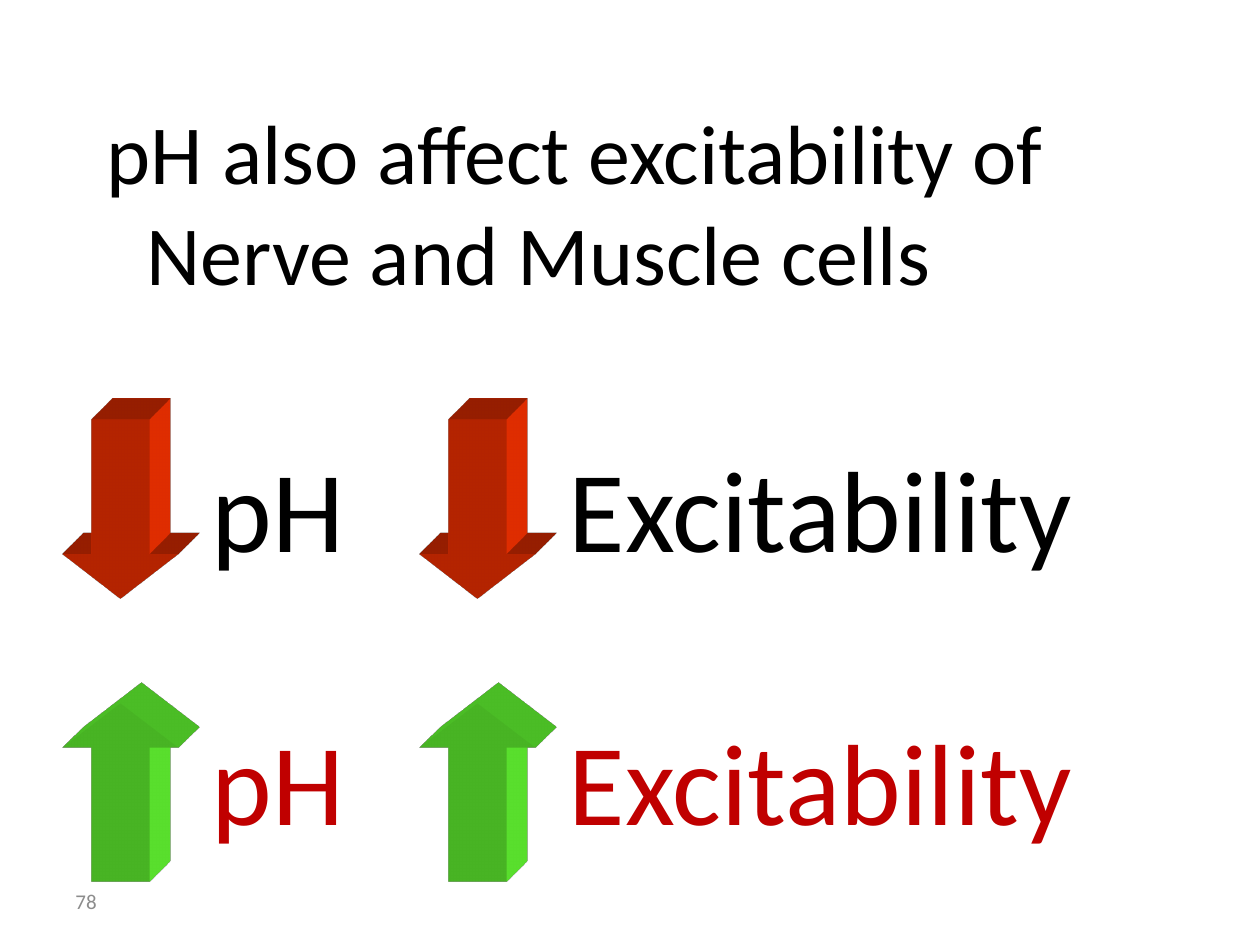
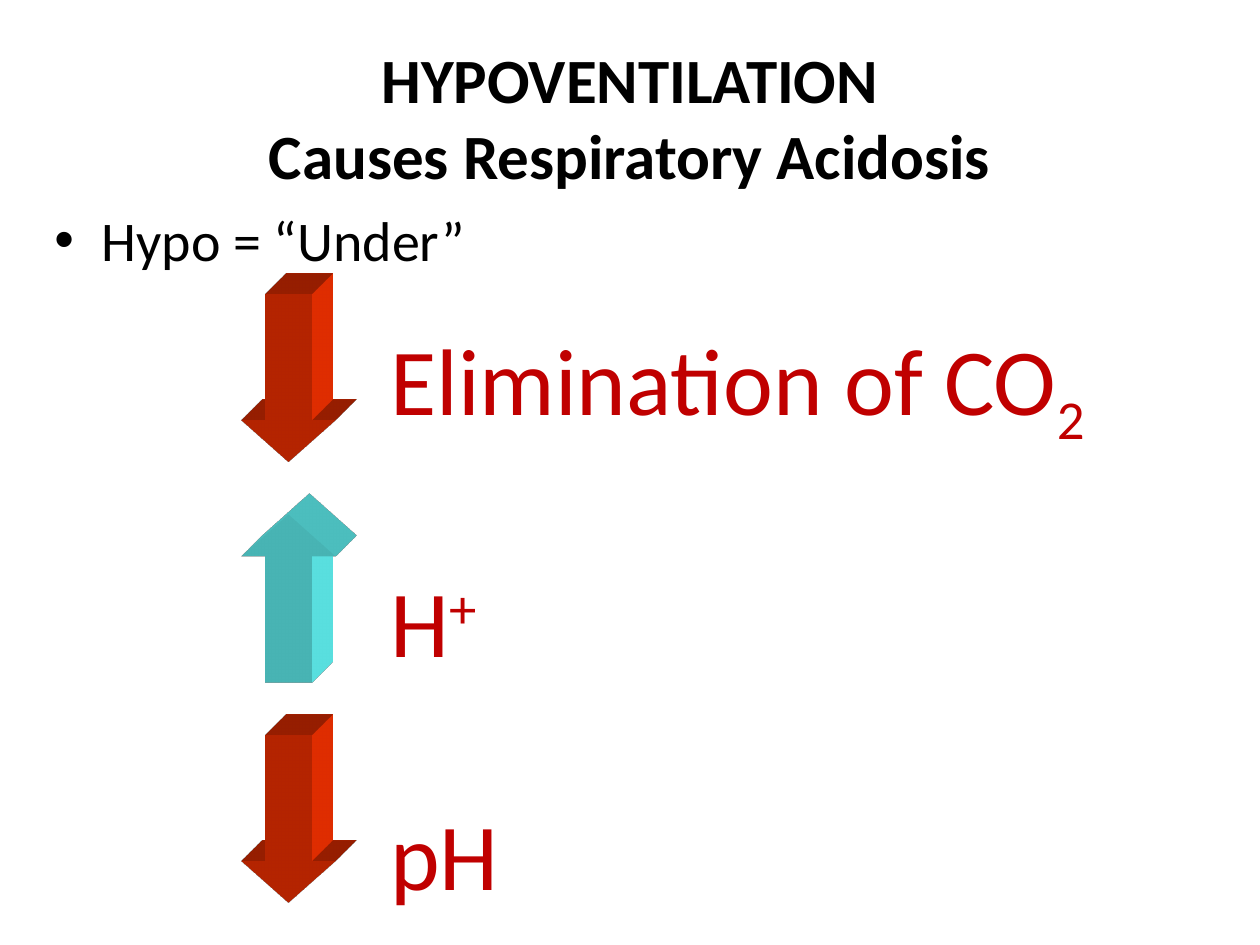
from lxml import etree
from pptx import Presentation
from pptx.dml.color import RGBColor
from pptx.enum import shapes, text
from pptx.oxml import ns
from pptx.util import Pt

FONT = "Calibri"
BLACK, CRIMSON, GRAY = "000000", "C00000", "8C8C8C"
RED, GREEN, CYAN = "FF3300", "66FF33", "66FFFF"
UP, DOWN = shapes.MSO_SHAPE.UP_ARROW, shapes.MSO_SHAPE.DOWN_ARROW
DEPTH = Pt(33.87)


def color(value):
    return RGBColor.from_string(value)


def add_text(slide, words, box, size=54, fill=BLACK, bold=False, align=None,
             anchor=text.MSO_ANCHOR.TOP, margin=0, indent=0, bullet=None, script=None):
    frame = slide.shapes.add_textbox(*map(Pt, box)).text_frame
    frame.word_wrap = True
    frame.vertical_anchor = anchor
    line = frame.paragraphs[0]
    line.text = words
    line.alignment = align
    if script:
        mark, baseline = script
        run = line.add_run()
        run.text = mark
        run.font._element.set("baseline", str(baseline * 1000))
    for run in line.runs:
        run.font.name = FONT
        run.font.size = Pt(size)
        run.font.bold = bold
        run.font.color.rgb = color(fill)
    if margin:
        layout = line._p.get_or_add_pPr()
        layout.set("marL", str(Pt(margin)))
        layout.set("indent", str(Pt(indent)))
        if bullet:
            etree.SubElement(layout, ns.qn("a:buFont"), typeface="Arial")
            etree.SubElement(layout, ns.qn("a:buChar"), char=bullet)
        else:
            etree.SubElement(layout, ns.qn("a:buNone"))


def add_block_arrow(slide, direction, box, fill, head):
    arrow = slide.shapes.add_shape(direction, *map(Pt, box))
    arrow.adjustments[0] = 0.5
    arrow.adjustments[1] = head / box[2]
    arrow.shadow.inherit = False
    arrow.fill.solid()
    arrow.fill.fore_color.rgb = color(fill)
    arrow.line.fill.background()
    properties = arrow._element.spPr
    scene = etree.SubElement(properties, ns.qn("a:scene3d"))
    etree.SubElement(scene, ns.qn("a:camera"), prst="legacyObliqueTopRight")
    etree.SubElement(scene, ns.qn("a:lightRig"), rig="legacyFlat3", dir="b")
    solid = etree.SubElement(properties, ns.qn("a:sp3d"), extrusionH=str(DEPTH),
                             prstMaterial="legacyMatte")
    for bevel in ("a:bevelT", "a:bevelB"):
        etree.SubElement(solid, ns.qn(bevel), w="13500", h="13500", prst="angle")
    side = etree.SubElement(solid, ns.qn("a:extrusionClr"))
    etree.SubElement(side, ns.qn("a:srgbClr"), val=fill)


def add_effect_row(slide, left, top, direction, arrow_fill, text_fill, text_drop):
    for column, (label, width) in enumerate((("pH", 108), ("Excitability", 400))):
        x = left + column * 204
        add_text(slide, label, (x + 78, top + text_drop, width, 86), size=66, fill=text_fill)
        add_block_arrow(slide, direction, (x, top, 66, 102), arrow_fill, 25.5)


def add_chain(slide, left, top):
    steps = (
        ("Elimination of CO", ("2", -25), DOWN, RED, 12),
        ("H", ("+", 30), UP, CYAN, 24),
        ("pH", None, DOWN, RED, 31.5),
    )
    for index, (label, script, direction, fill, text_drop) in enumerate(steps):
        y = top + index * 126
        add_text(slide, label, (left + 78, y + text_drop, 504, 72), fill=CRIMSON, script=script)
        add_block_arrow(slide, direction, (left, y, 54, 96), fill, 24)


def build_excitability(slide):
    add_text(slide, "78", (36, 500.5, 168, 28.75), size=12, fill=GRAY,
             anchor=text.MSO_ANCHOR.MIDDLE)
    add_text(slide, "pH also affect excitability of Nerve and Muscle cells",
             (18, 54, 684, 180), size=48, margin=58.5, indent=-22.5)
    add_effect_row(slide, 36, 240, DOWN, RED, BLACK, 6)
    add_effect_row(slide, 36, 402, UP, GREEN, CRIMSON, 0)


def build_hypoventilation(slide):
    add_text(slide, "HYPOVENTILATION\vCauses Respiratory Acidosis", (36, 21.6, 648, 90),
             size=36, bold=True, align=text.PP_ALIGN.CENTER, anchor=text.MSO_ANCHOR.MIDDLE)
    add_text(slide, "Hypo = “Under”", (24, 114, 678, 54), size=32,
             margin=27, indent=-27, bullet="•")
    add_chain(slide, 138, 168)


def main():
    deck = Presentation()
    deck.slide_width, deck.slide_height = Pt(720), Pt(540)
    for build in (build_excitability, build_hypoventilation):
        build(deck.slides.add_slide(deck.slide_layouts[6]))
    deck.save("out.pptx")


if __name__ == "__main__":
    main()
